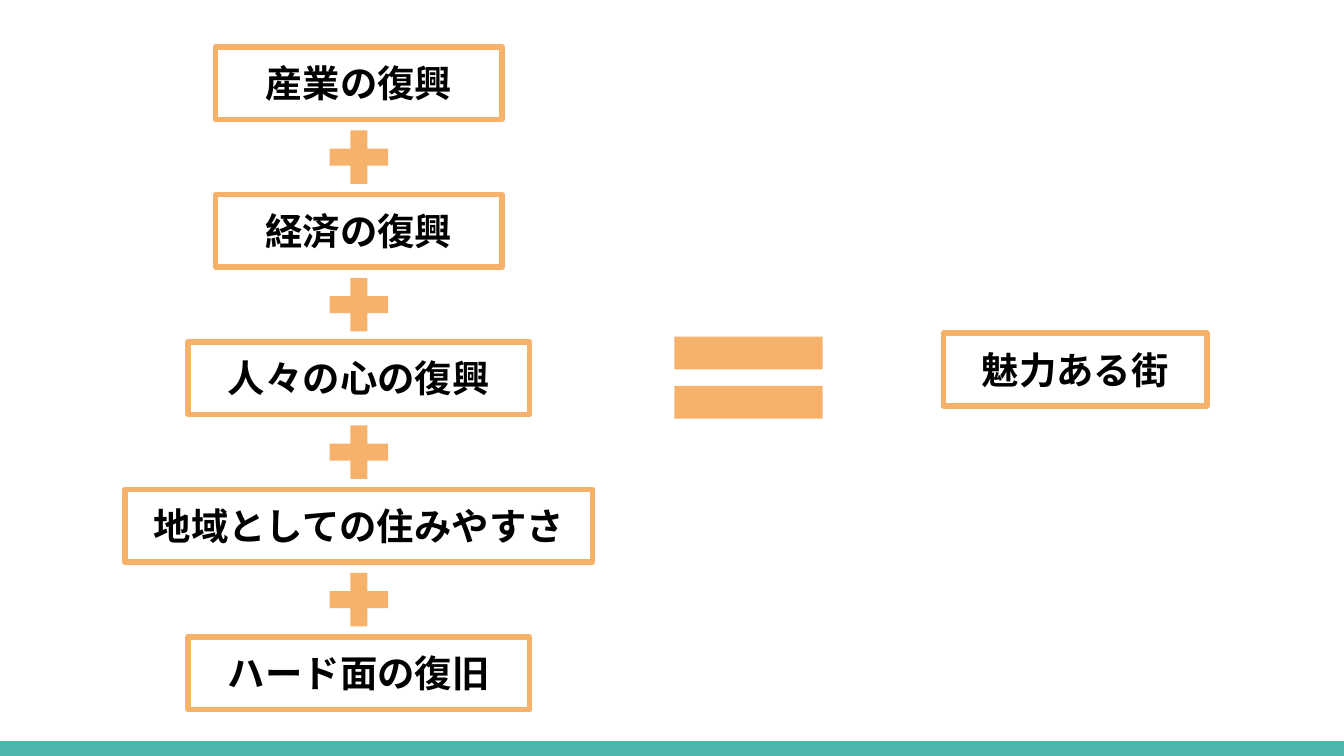
"""Build a slide that adds five kinds of recovery up to an attractive town."""
from pptx import Presentation
from pptx.dml.color import RGBColor
from pptx.enum.shapes import MSO_SHAPE
from pptx.enum.text import MSO_ANCHOR, MSO_AUTO_SIZE, PP_ALIGN
from pptx.util import Inches, Pt

RECTANGLE = MSO_SHAPE.RECTANGLE
PLUS = MSO_SHAPE.MATH_PLUS
EQUAL = MSO_SHAPE.MATH_EQUAL
TOP = MSO_ANCHOR.TOP
GROW = MSO_AUTO_SIZE.SHAPE_TO_FIT_TEXT
CENTER = PP_ALIGN.CENTER

FACTORS = [
    ("産業の復興", 2.13),
    ("経済の復興", 2.13),
    ("人々の心の復興", 2.54),
    ("地域としての住みやすさ", 3.48),
    ("ハード面の復旧", 2.54),
]
RESULT = "魅力ある街"

ORANGE, TEAL, BLACK = "F6B26B", "4DB6AC", "000000"
FONT = "Open Sans"
SLIDE_WIDTH = 10
SLIDE_HEIGHT = SLIDE_WIDTH * 9 / 16
BAR_HEIGHT = 0.11
COLUMN_CENTER = 2.67
FIRST_TOP, LAST_TOP = 0.35, 4.74
BOX_HEIGHT = 0.54
PLUS_WIDTH, PLUS_HEIGHT = 0.59, 0.54
PLUS_OFFSET = 0.55


def color(value):
    return RGBColor.from_string(value)


def add_shape(slide, kind, left, top, width, height):
    shape = slide.shapes.add_shape(
        kind, Inches(left), Inches(top), Inches(width), Inches(height))
    shape.shadow.inherit = False
    return shape


def add_solid(slide, kind, place, fill, adjustments=()):
    shape = add_shape(slide, kind, *place)
    shape.fill.solid()
    shape.fill.fore_color.rgb = color(fill)
    shape.line.fill.background()
    for index, value in enumerate(adjustments):
        shape.adjustments[index] = value


def add_box(slide, text, left, top, width):
    shape = add_shape(slide, RECTANGLE, left, top, width, BOX_HEIGHT)
    shape.fill.background()
    shape.line.color.rgb = color(ORANGE)
    shape.line.width = Pt(3)
    frame = shape.text_frame
    frame.word_wrap = True
    frame.auto_size = GROW
    frame.vertical_anchor = TOP
    frame.margin_left = frame.margin_right = Inches(0.1)
    frame.margin_top = frame.margin_bottom = Inches(0.1)
    paragraph = frame.paragraphs[0]
    paragraph.text = text
    paragraph.alignment = CENTER
    paragraph.font.name = FONT
    paragraph.font.size = Pt(20)
    paragraph.font.bold = True
    paragraph.font.color.rgb = color(BLACK)


def main():
    presentation = Presentation()
    presentation.slide_width = Inches(SLIDE_WIDTH)
    presentation.slide_height = Inches(SLIDE_HEIGHT)
    slide = presentation.slides.add_slide(presentation.slide_layouts[6])

    bar = (0, SLIDE_HEIGHT - BAR_HEIGHT, SLIDE_WIDTH, BAR_HEIGHT)
    add_solid(slide, RECTANGLE, bar, TEAL)

    pitch = (LAST_TOP - FIRST_TOP) / (len(FACTORS) - 1)
    for index, (text, width) in enumerate(FACTORS):
        top = FIRST_TOP + index * pitch
        add_box(slide, text, COLUMN_CENTER - width / 2, top, width)
        if index < len(FACTORS) - 1:
            plus = (COLUMN_CENTER - PLUS_WIDTH / 2, top + PLUS_OFFSET,
                    PLUS_WIDTH, PLUS_HEIGHT)
            add_solid(slide, PLUS, plus, ORANGE, [0.235])

    add_solid(slide, EQUAL, (4.82, 2.29, 1.5, 1.04), ORANGE, [0.235, 0.118])
    add_box(slide, RESULT, 7.02, 2.48, 1.96)
    presentation.save("out.pptx")


if __name__ == "__main__":
    main()
